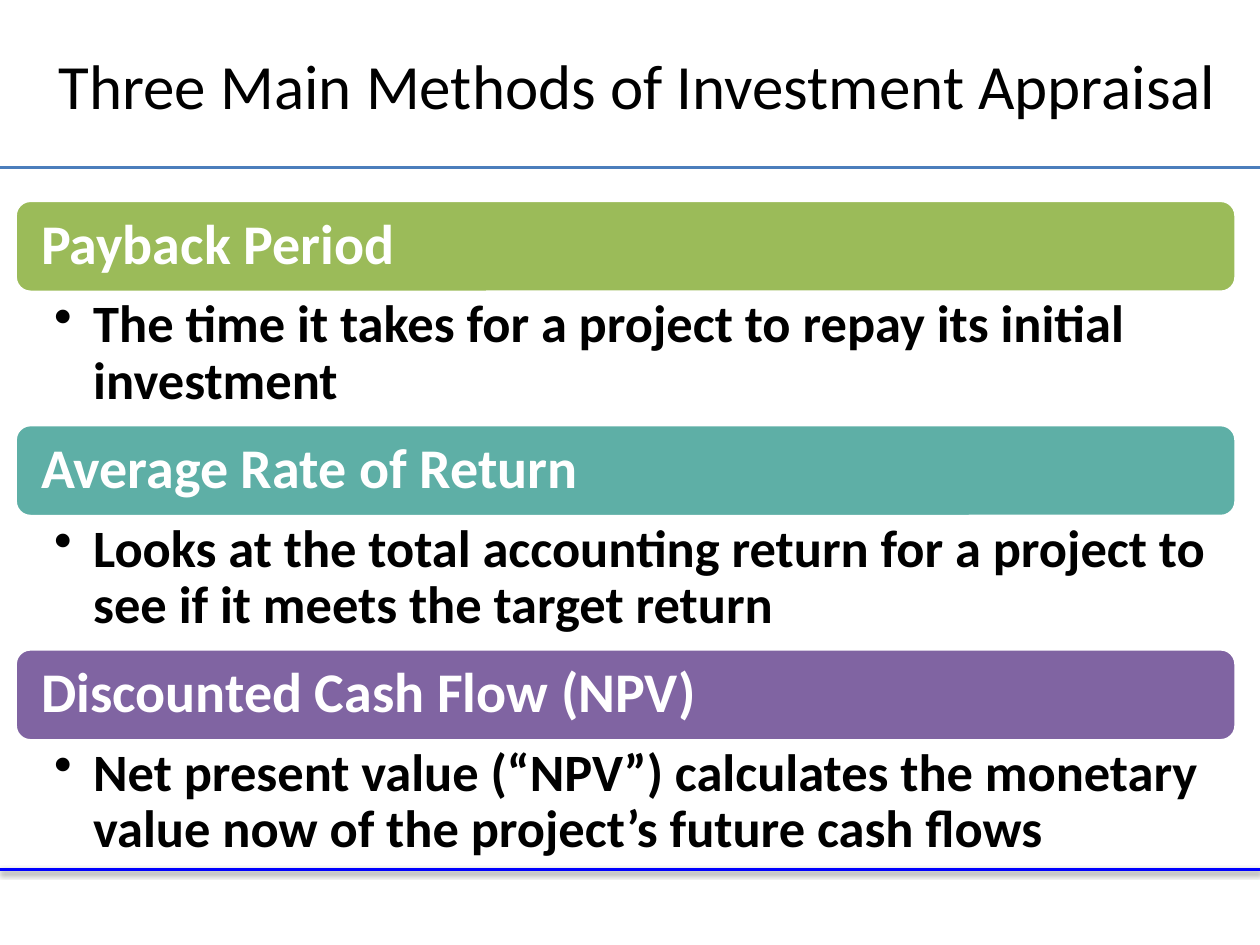
from dataclasses import dataclass

from lxml.etree import SubElement
from pptx import Presentation
from pptx.dml.color import RGBColor
from pptx.enum.shapes import MSO_CONNECTOR as CONN, MSO_SHAPE as SHAPE
from pptx.enum.text import MSO_ANCHOR as ANCHOR, PP_ALIGN as ALIGN
from pptx.oxml.ns import qn
from pptx.util import Inches, Pt


@dataclass(frozen=True)
class Theme:
    font: str = "Calibri"
    ink: str = "000000"
    paper: str = "FFFFFF"
    title_rule: str = "4B7EBC"
    foot_rule: str = "0000FF"
    title_size: int = 36
    banner_size: int = 32
    body_size: int = 30


THEME = Theme()
WIDTH, HEIGHT = 10, 7.5
LEFT = 0.12
BANNER_H, DETAIL_H = 0.73, 1.05
METHODS = [
    ("Payback Period", "9BBB59",
     "The time it takes for a project to repay its initial investment"),
    ("Average Rate of Return", "5EAFA6",
     "Looks at the total accounting return for a project to see if it meets the target return"),
    ("Discounted Cash Flow (NPV)", "8064A2",
     "Net present value (“NPV”) calculates the monetary value now of the project’s future cash flows"),
]


def rgb(value):
    return RGBColor.from_string(value)


def write(tf, text, size, color, frame, para, bold=False):
    """Fill a text frame with one paragraph, formatted from the two dicts."""
    for name, value in frame.items():
        setattr(tf, name, value)
    tf.word_wrap = True
    p = tf.paragraphs[0]
    for name, value in para.items():
        setattr(p, name, value)
    r = p.add_run()
    r.text = text
    for name, value in {"name": THEME.font, "size": Pt(size), "bold": bold}.items():
        setattr(r.font, name, value)
    r.font.color.rgb = rgb(color)
    return p


def margins(left, top, right, bottom):
    return {"margin_left": Inches(left), "margin_top": Inches(top),
            "margin_right": Inches(right), "margin_bottom": Inches(bottom)}


def add_rule(slide, y, color, width, shadow=False):
    """Draw a line across the whole slide."""
    s = slide.shapes.add_connector(CONN.STRAIGHT, 0, Inches(y), Inches(WIDTH), Inches(y))
    s.line.color.rgb = rgb(color)
    s.line.width = Pt(width)
    effects = SubElement(s._element.spPr, qn("a:effectLst"))
    if shadow:
        outer = SubElement(effects, qn("a:outerShdw"), blurRad=str(Pt(3.1)),
                           dist=str(Pt(1.6)), dir="5400000", rotWithShape="0")
        black = SubElement(outer, qn("a:srgbClr"), val=THEME.ink)
        SubElement(black, qn("a:alpha"), val="38000")


def add_title(slide, text, box):
    s = slide.shapes.title
    s.left, s.top, s.width, s.height = map(Inches, box)
    write(s.text_frame, text, THEME.title_size, THEME.ink,
          {"vertical_anchor": ANCHOR.MIDDLE}, {"alignment": ALIGN.CENTER})


def add_method(slide, name, color, detail, left, top, width):
    """Place a coloured banner with its bulleted explanation below."""
    s = slide.shapes.add_shape(SHAPE.ROUNDED_RECTANGLE, Inches(left), Inches(top),
                               Inches(width), Inches(BANNER_H))
    s.shadow.inherit = False
    s.fill.solid()
    s.fill.fore_color.rgb = rgb(color)
    s.line.color.rgb = rgb(THEME.paper)
    s.line.width = Pt(2)
    write(s.text_frame, name, THEME.banner_size, THEME.paper,
          {"vertical_anchor": ANCHOR.MIDDLE, **margins(0.17, 0.17, 0.17, 0.17)},
          {"alignment": ALIGN.LEFT, "line_spacing": 0.9}, bold=True)

    s = slide.shapes.add_textbox(Inches(left), Inches(top + BANNER_H),
                                 Inches(width), Inches(DETAIL_H))
    p = write(s.text_frame, detail, THEME.body_size, THEME.ink,
              {"vertical_anchor": ANCHOR.TOP, **margins(0.31, 0.04, 0.23, 0.04)},
              {"level": 1, "alignment": ALIGN.LEFT, "line_spacing": 0.9}, bold=True)
    props = p._p.get_or_add_pPr()
    props.set("marL", str(Inches(0.31)))
    props.set("indent", str(Inches(-0.31)))
    SubElement(props, qn("a:buChar"), char="•")


def main():
    prs = Presentation()
    prs.slide_width, prs.slide_height = Inches(WIDTH), Inches(HEIGHT)
    slide = prs.slides.add_slide(prs.slide_layouts[5])
    add_rule(slide, 6.9, THEME.foot_rule, 2, shadow=True)
    add_rule(slide, 1.33, THEME.title_rule, 1.75)
    add_title(slide, "Three Main Methods of Investment Appraisal",
              (LEFT, 0.16, WIDTH - LEFT, 1.02))
    for i, (name, color, detail) in enumerate(METHODS):
        add_method(slide, name, color, detail,
                   LEFT, 1.59 + i * (BANNER_H + DETAIL_H), 9.69)
    prs.save("out.pptx")


if __name__ == "__main__":
    main()
